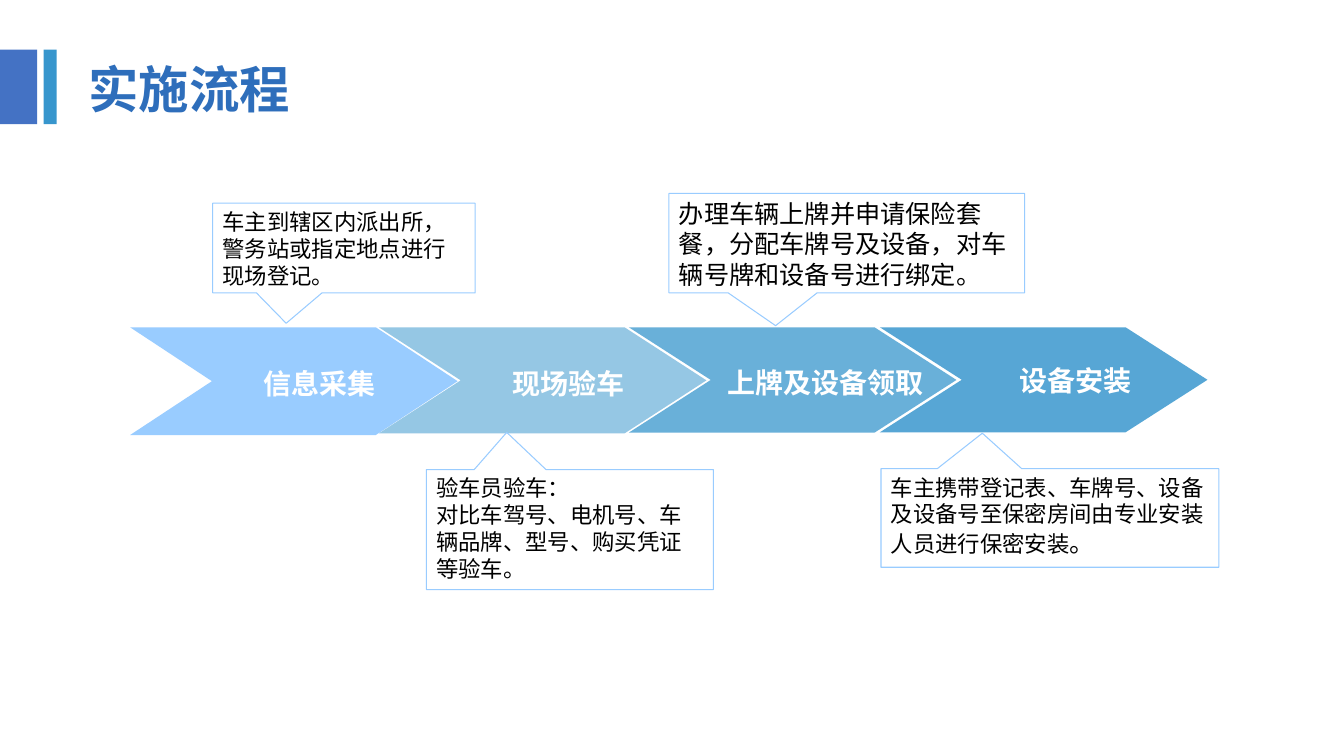
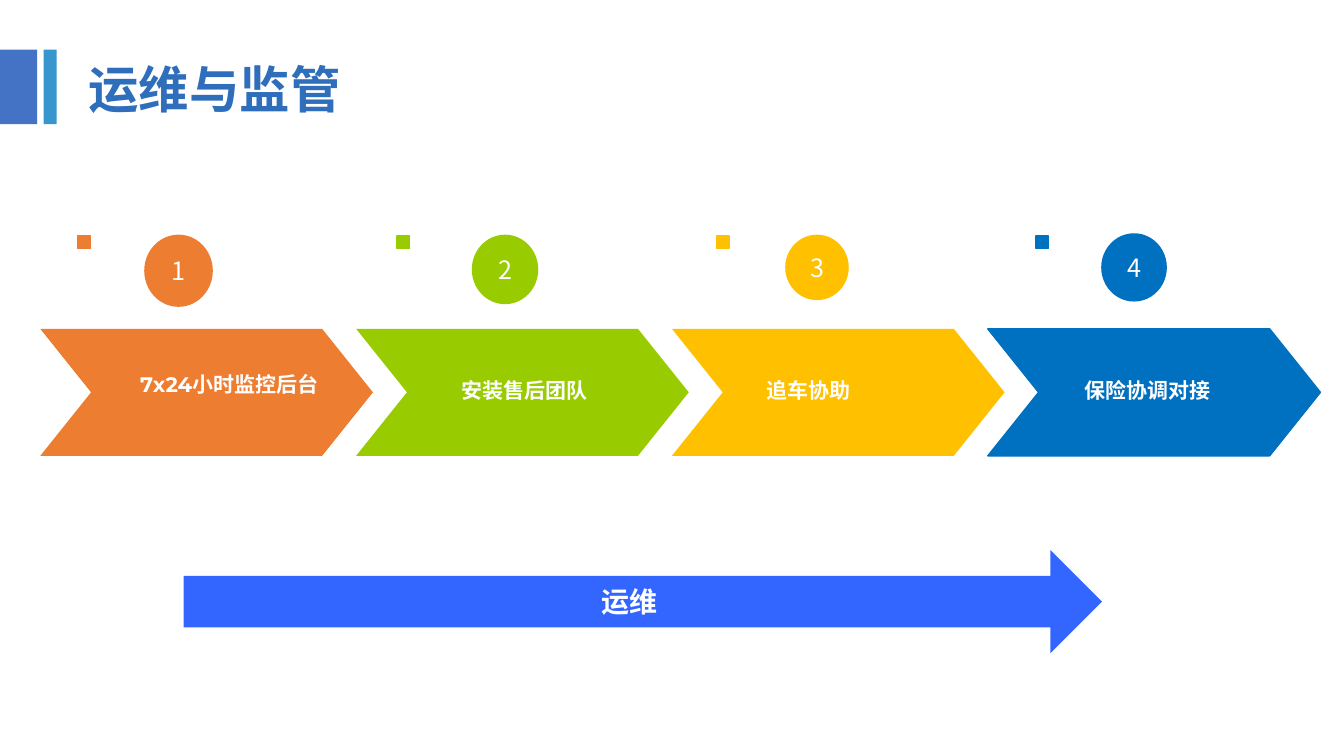
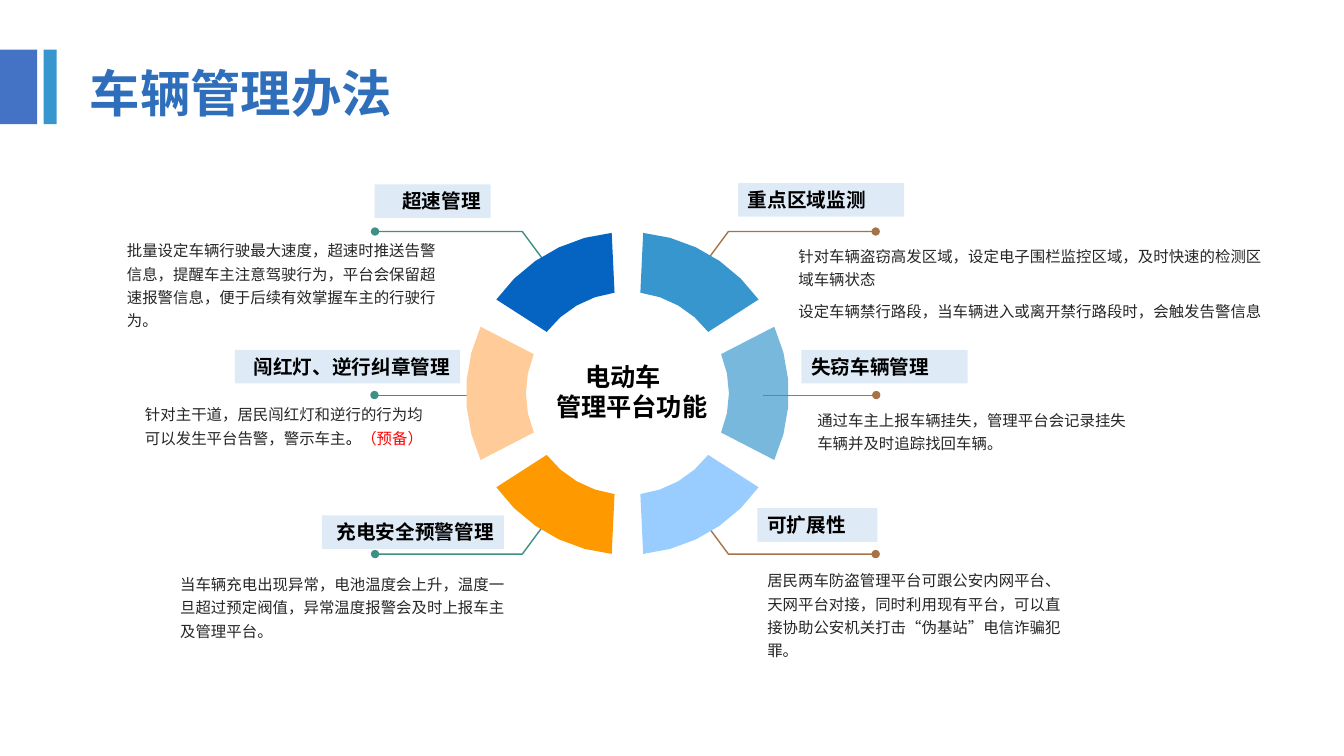
from math import cos, radians, sin

from lxml.etree import SubElement
from pptx import Presentation
from pptx.dml.color import RGBColor
from pptx.enum.shapes import MSO_CONNECTOR as CONN, MSO_SHAPE as SHAPE
from pptx.enum.text import MSO_ANCHOR as ANCHOR, PP_ALIGN as ALIGN
from pptx.oxml.ns import qn
from pptx.util import Pt

SANS, ARIAL, LATIN = "Noto Sans CJK SC", "Arial", "Montserrat"
TITLE, BAND, ACCENT = "2E6EBB", "4472C4", "3796CD"
WHITE, BLACK, BODY, RED = "FFFFFF", "000000", "262626", "FF0000"
SKY, TAG = "99CCFF", "DEEBF7"
BROWN, GREEN = "A67346", "3E8F84"


def rgb(color):
    """Turn a hex string into a colour."""
    return RGBColor.from_string(color)


def pts(*values):
    """Turn numbers into lengths in points."""
    return [Pt(v) for v in values]


def paint(sp, fill=None, line=None, width=1, alpha=None):
    """Set fill, outline and opacity, and drop the shadow."""
    sp.shadow.inherit = False
    if fill:
        sp.fill.solid()
        sp.fill.fore_color.rgb = rgb(fill)
    else:
        sp.fill.background()
    if alpha:
        color = sp._element.spPr.find(qn("a:solidFill"))[0]
        SubElement(color, qn("a:alpha")).set("val", str(alpha * 1000))
    if line:
        sp.line.color.rgb = rgb(line)
        sp.line.width = Pt(width)
    else:
        sp.line.fill.background()
    return sp


def add_shape(slide, kind, box, adj=(), **look):
    """Add a painted preset shape."""
    sp = slide.shapes.add_shape(kind, *pts(*box))
    for i, value in enumerate(adj):
        sp.adjustments[i] = value
    return paint(sp, **look)


def style(r, size, color, bold=False, font=SANS, east=LATIN):
    """Format one run."""
    r.font.name, r.font.size, r.font.bold = font, Pt(size), bold
    r.font.color.rgb = rgb(color)
    SubElement(r._r.get_or_add_rPr(), qn("a:ea")).set("typeface", east)


def write(sp, text, size, color, bold=False, font=SANS, east=LATIN, align=ALIGN.LEFT,
          anchor=ANCHOR.TOP, wrap=True, extra=()):
    """Fill a shape with formatted text; extra holds closing runs."""
    tf = sp.text_frame
    tf.text = text
    tf.word_wrap, tf.vertical_anchor = wrap, anchor
    for p in tf.paragraphs:
        p.alignment = align
        p._p.get_or_add_pPr().set("hangingPunct", "0")
        for r in p.runs:
            style(r, size, color, bold, font, east)
    for part, part_size, part_color in extra:
        r = tf.paragraphs[-1].add_run()
        r.text = part
        style(r, part_size, part_color, bold, font, east)
    return tf


def add_text(slide, box, text, size, color, **options):
    """Add a text box."""
    return write(slide.shapes.add_textbox(*pts(*box)), text, size, color, **options)


def new_slide(prs, title, left=56.2, top=38):
    """Add a blank slide with side bands and title."""
    slide = prs.slides.add_slide(prs.slide_layouts[6])
    add_shape(slide, SHAPE.RECTANGLE, (31.2, 35.4, 9.2, 53.2), fill=ACCENT)
    add_text(slide, (left, top, 338, 50.4), title, 36, TITLE, bold=True)
    add_shape(slide, SHAPE.RECTANGLE, (0, 35.4, 26.6, 53.2), fill=BAND)
    return slide


def process_chain(slide, top, width, steps):
    """Draw overlapping chevrons along one line."""
    for left, text, height, color, alpha, shift, drop in steps:
        sp = add_shape(slide, SHAPE.CHEVRON, (left, top, width, height),
                       [58.5 / height], fill=color, alpha=alpha)
        tf = write(sp, text, 20, WHITE, bold=True, font=ARIAL, align=ALIGN.CENTER,
                   anchor=ANCHOR.MIDDLE, wrap=False)
        tf.margin_left, tf.margin_right = pts(shift, 0)
        tf.margin_top, tf.margin_bottom = pts(drop, 0)


def callout(slide, box, tip, text, size=16, extra=()):
    """Draw an outlined callout whose tip is relative to its centre."""
    sp = add_shape(slide, SHAPE.RECTANGULAR_CALLOUT, box, tip, line=SKY, width=0.75)
    write(sp, text, size, BLACK, font=ARIAL, extra=extra)


def flow_slide(prs):
    """Build the implementation process slide."""
    slide = new_slide(prs, "实施流程")
    process_chain(slide, 233.8, 234, [
        (92.9, "信息采集", 77, SKY, None, 37, 3),
        (270.6, "现场验车", 75.8, ACCENT, 53, 36.5, 4),
        (449.2, "上牌及设备领取", 75.2, ACCENT, 75, 47, 4),
        (628.5, "设备安装", 75, ACCENT, 84, 45, 0),
    ])
    callout(slide, (151.9, 145.2, 187.5, 64), (-0.22, 0.84),
            "车主到辖区内派出所，警务站或指定地点进行现场登记。")
    callout(slide, (304.6, 335.4, 205, 85.7), (-0.22, -0.81),
            "验车员验车：\n对比车驾号、电机号、车辆品牌、型号、购买凭证等验车。")
    callout(slide, (477.8, 138.2, 254, 71), (-0.2, 0.83),
            "办理车辆上牌并申请保险套餐，分配车牌号及设备，对车辆号牌和设备号进行绑定。", 18)
    callout(slide, (629.3, 334.8, 241.3, 70.4), (-0.2, -0.86),
            "车主携带登记表、车牌号、设备及设备号至保密房间由专业安装人员进行保密安装",
            extra=[("。", 18, BLACK)])


def service_step(slide, left, number, color, label, badge, line):
    """Draw one chevron with its numbered badge and label."""
    add_shape(slide, SHAPE.CHEVRON, (left, 234.9, 237.6, 90.7), [0.4], fill=color,
              line=line)
    dx, width, height = badge
    sp = add_shape(slide, SHAPE.OVAL, (left + dx, 167.6, width, height), fill=color,
                   line=line, width=2)
    write(sp, str(number), 18, WHITE, align=ALIGN.CENTER, anchor=ANCHOR.MIDDLE)
    text, dx, top, width = label
    box = (left + dx, top, width, 25.2)
    options = dict(bold=True, font=LATIN, anchor=ANCHOR.MIDDLE)
    if line:
        tag = add_shape(slide, SHAPE.RECTANGLE, box, fill=color, line=line, width=0.75)
        write(tag, text, 15, "FEFEFE", **options)
    else:
        add_text(slide, box, text, 15, "FEFEFE", **options)


def service_slide(prs):
    """Build the operation and supervision slide."""
    slide = new_slide(prs, "运维与监管")
    blue = "0070C0"
    steps = [
        ("ED7D31", ("7x24小时监控后台", 64.2, 262, 149), (74.2, 49, 51.6), None),
        ("99CC00", ("安装售后团队", 68.2, 266.4, 119.5), (82.6, 47.5, 49.7), None),
        ("FFC000", ("追车协助", 60.6, 266.4, 119.5), (80.9, 45.4, 46.8), None),
        (blue, ("保险协调对接", 62, 266.4, 119.5), (82, 44.9, 46.8), blue),
    ]
    for i, (color, label, badge, line) in enumerate(steps):
        service_step(slide, 28.8 + 225.6 * i, i + 1, color, label, badge, line)
        add_shape(slide, SHAPE.RECTANGLE, (55.6 + 228.1 * i, 168.5, 9, 9),
                  fill=color, line=color)
    sp = add_shape(slide, SHAPE.RIGHT_ARROW, (131.2, 393, 656, 73.6), fill="3366FF")
    write(sp, "运维", 20, WHITE, bold=True, align=ALIGN.CENTER, anchor=ANCHOR.MIDDLE)


def freeform(slide, points, close):
    """Build an outline through points."""
    start, *rest = [pts(*point) for point in points]
    builder = slide.shapes.build_freeform(*start)
    builder.add_line_segments(rest, close=close)
    return builder.convert_to_shape()


def dot_end(sp):
    """End a line with a dot."""
    SubElement(sp.line._get_or_add_ln(), qn("a:tailEnd")).set("type", "oval")


def leaders(slide, cx, cy):
    """Draw the lines that lead out of the ring."""
    for side, color in ((1, BROWN), (-1, GREEN)):
        for up in (-1, 1):
            sp = freeform(slide, [(cx + side * 57.6, cy + up * 93.6),
                                  (cx + side * 73.6, cy + up * 115.2),
                                  (cx + side * 178.8, cy + up * 115.2)], False)
            dot_end(paint(sp, line=color))
        ends = (cx + side * 98.5, cy + 1.6, cx + side * 179.2, cy + 1.6)
        line = slide.shapes.add_connector(CONN.STRAIGHT, *pts(*ends))
        line.line.color.rgb, line.line.width = rgb(color), Pt(0.5)
        dot_end(line)
        SubElement(line._element.spPr, qn("a:effectLst"))


def ring(slide, cx, cy, colors):
    """Draw equal ring segments clockwise from the top."""
    for i, (color, alpha) in enumerate(colors):
        points = []
        for radius, half, steps in ((115.2, 24.4, 5), (72.5, -22.7, 4)):
            for k in range(steps + 1):
                angle = radians(30 + 60 * i + half * (2 * k / steps - 1))
                points.append((cx + radius * sin(angle), cy - radius * cos(angle)))
        paint(freeform(slide, points, True), fill=color, alpha=alpha)


def topic(slide, tag, tag_box, body, body_box, align, extra=()):
    """Place a tinted tag and its description."""
    tf = add_text(slide, body_box, body, 11, BODY, east=SANS, extra=extra)
    for i, p in enumerate(tf.paragraphs):
        p.line_spacing = 1.26
        if i:
            p.space_before = Pt(6.2)
    sp = add_shape(slide, SHAPE.RECTANGLE, (*tag_box, 24), fill=TAG)
    write(sp, tag, 14, BLACK, bold=True, align=align)


def management_slide(prs):
    """Build the vehicle management slide."""
    slide = new_slide(prs, "车辆管理办法", 57, 41)
    leaders(slide, 446.7, 280.6)
    ring(slide, 448.2, 281, [(ACCENT, None), (ACCENT, 67), (SKY, None),
                             ("FF9900", None), ("FFCC99", None), ("0563C1", None)])
    left, right = ALIGN.LEFT, ALIGN.RIGHT
    topic(slide, "超速管理", (267.6, 131.7, 83),
          "批量设定车辆行驶最大速度，超速时推送告警信息，提醒车主注意驾驶行为，"
          "平台会保留超速报警信息，便于后续有效掌握车主的行驶行为。",
          (83.6, 165.6, 244, 86.4), right)
    topic(slide, "闯红灯、逆行纠章管理", (167.8, 249.9, 160.8),
          "针对主干道，居民闯红灯和逆行的行为均可以发生平台告警，警示车主",
          (96.5, 282.7, 216, 47.5), right,
          [("。", 11, BLACK), ("（预备）", 11, RED)])
    topic(slide, "充电安全预警管理", (229.9, 368.1, 130),
          "当车辆充电出现异常，电池温度会上升，温度一旦超过预定阀值，"
          "异常温度报警会及时上报车主及管理平台。",
          (121.6, 403.8, 250.6, 67), right)
    topic(slide, "重点区域监测", (527.2, 130.8, 118.6),
          "针对车辆盗窃高发区域，设定电子围栏监控区域，及时快速的检测区域车辆状态\n"
          "设定车辆禁行路段，当车辆进入或离开禁行路段时，会触发告警信息",
          (563.2, 169.3, 351.4, 73.4), left)
    topic(slide, "失窃车辆管理", (572.4, 249.9, 118.8),
          "通过车主上报车辆挂失，管理平台会记录挂失车辆并及时追踪找回车辆。",
          (576.7, 286.4, 240.5, 46.8), left)
    topic(slide, "可扩展性", (541, 363, 85.8),
          "居民两车防盗管理平台可跟公安内网平台、天网平台对接，同时利用现有平台，"
          "可以直接协助公安机关打击“伪基站”电信诈骗犯罪。",
          (541, 401.2, 229.7, 86.4), left)
    tf = add_text(slide, (390.2, 254.6, 122.4, 72), "电动车\n管理平台功能", 18, BLACK,
                  bold=True)
    tf.paragraphs[0]._p.get_or_add_pPr().set("marL", str(Pt(20.8)))


def main():
    """Build and save the presentation."""
    prs = Presentation()
    prs.slide_width, prs.slide_height = pts(960, 540)
    flow_slide(prs)
    service_slide(prs)
    management_slide(prs)
    prs.save("out.pptx")


if __name__ == "__main__":
    main()
